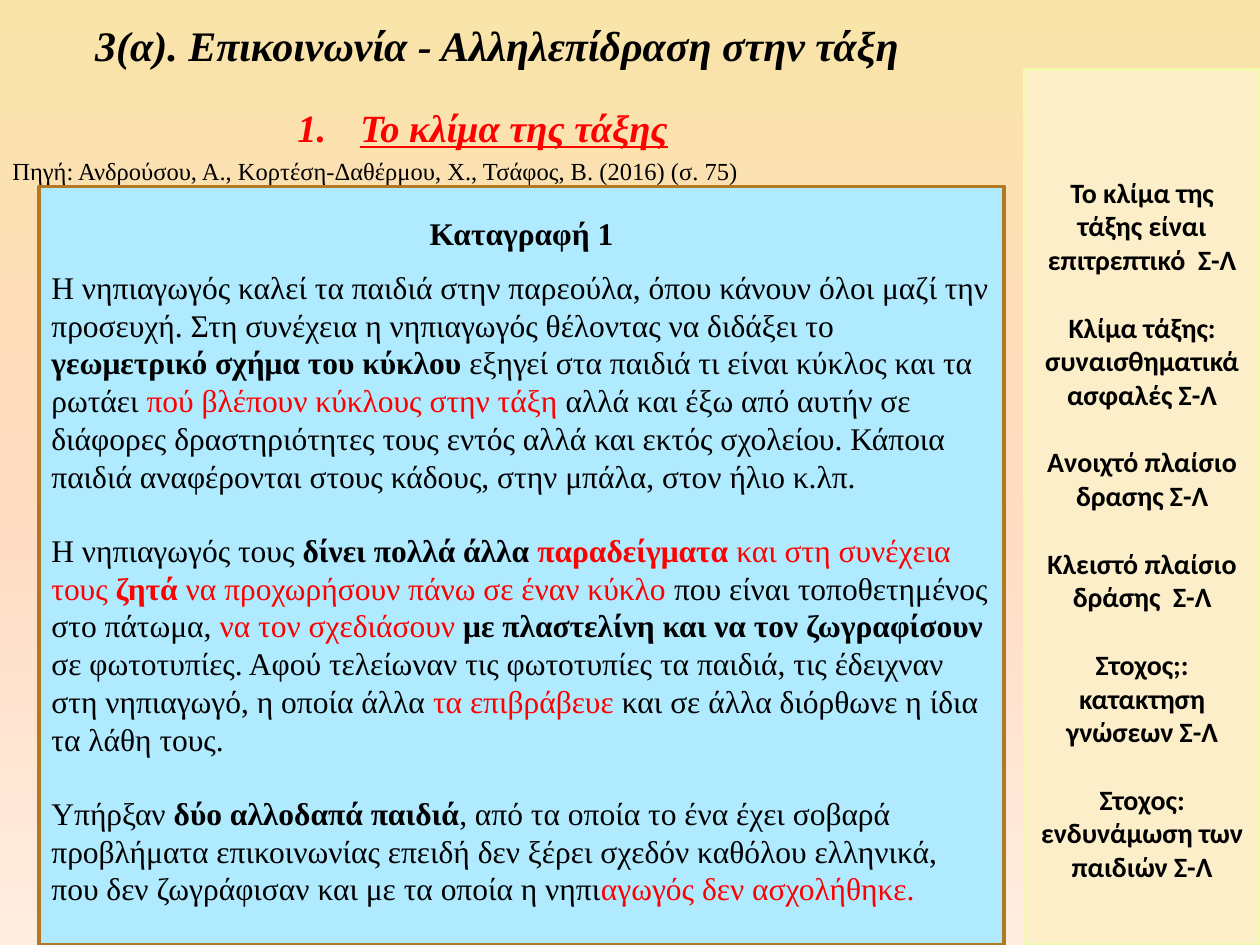
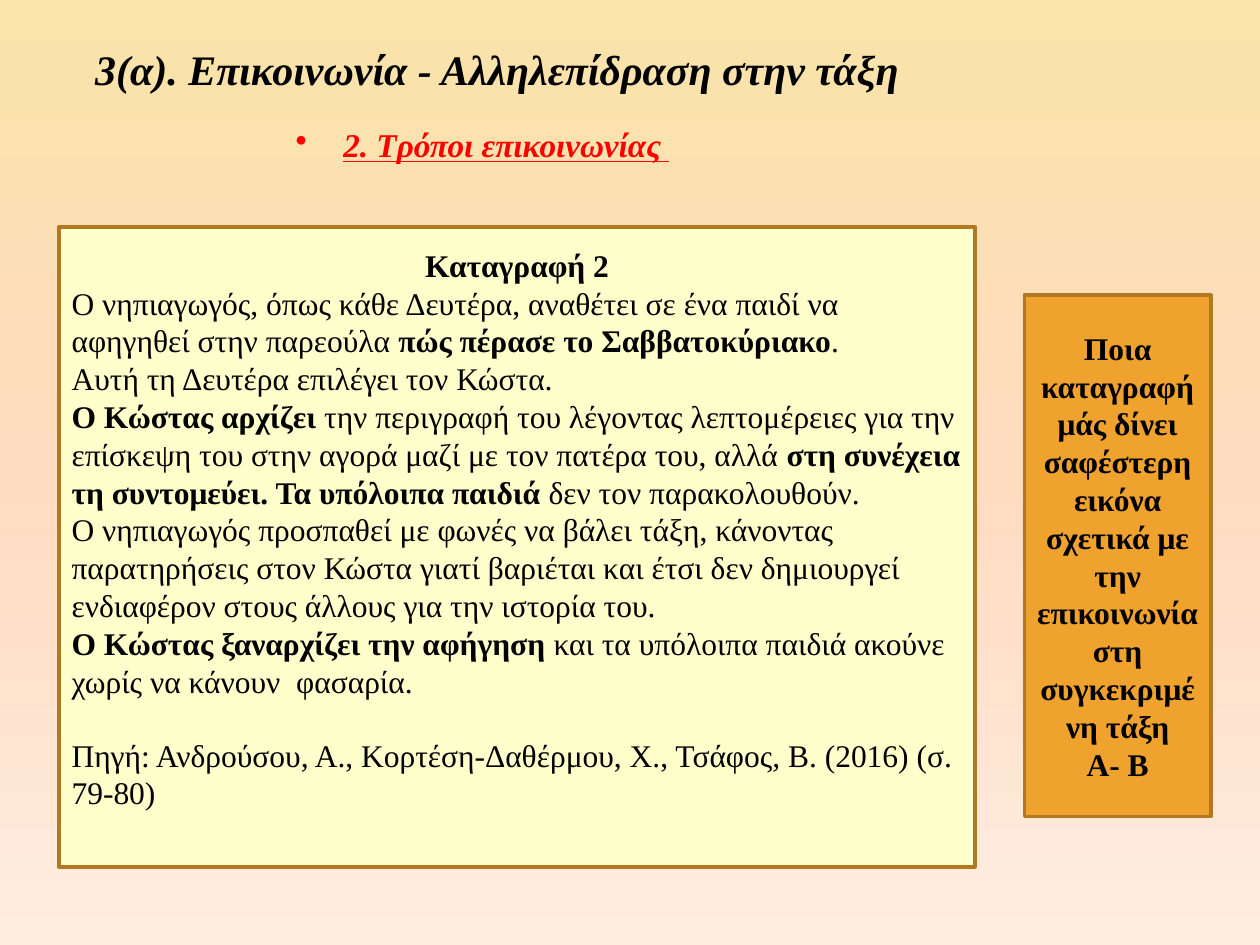
from copy import deepcopy

from pptx import Presentation
from pptx.dml.color import RGBColor
from pptx.enum.shapes import MSO_SHAPE
from pptx.enum.text import MSO_ANCHOR, PP_ALIGN
from pptx.oxml.ns import qn
from pptx.util import Inches, Pt

RECT = MSO_SHAPE.RECTANGLE
TOP, MIDDLE = MSO_ANCHOR.TOP, MSO_ANCHOR.MIDDLE
LEFT, CENTER = PP_ALIGN.LEFT, PP_ALIGN.CENTER

SERIF, SANS = "Times New Roman", "Calibri"
BLACK, RED, BROWN = "000000", "FF0000", "B27822"
BACKGROUND = [(0, "F9E4A9"), (0.5, "FFDBC0"), (1, "FFEDE0")]
TITLE = "3(α). Επικοινωνία - Αλληλεπίδραση στην τάξη"
SOURCE = "Πηγή: Ανδρούσου, Α., Κορτέση-Δαθέρμου, Χ., Τσάφος, Β. (2016) (σ. "
BLANK_LINE = 20.7

# Run styles: b = bold, r = red, i = italic, u = underlined.
RECORD_1 = [
    [("Η νηπιαγωγός καλεί τα παιδιά στην παρεούλα, όπου κάνουν όλοι μαζί την "
      "προσευχή. Στη συνέχεια η νηπιαγωγός θέλοντας να διδάξει το ", ""),
     ("γεωμετρικό σχήμα του κύκλου ", "b"),
     ("εξηγεί στα παιδιά τι είναι κύκλος και τα ρωτάει ", ""),
     ("πού βλέπουν κύκλους στην τάξη ", "r"),
     ("αλλά και έξω από αυτήν σε διάφορες δραστηριότητες τους εντός αλλά και "
      "εκτός σχολείου. Κάποια παιδιά αναφέρονται στους κάδους, στην μπάλα, "
      "στον ήλιο κ.λπ.", "")],
    [("Η νηπιαγωγός τους ", ""),
     ("δίνει πολλά άλλα ", "b"),
     ("παραδείγματα ", "br"),
     ("και στη συνέχεια τους ", "r"),
     ("ζητά ", "br"),
     ("να προχωρήσουν πάνω σε έναν κύκλο ", "r"),
     ("που είναι τοποθετημένος στο πάτωμα, ", ""),
     ("να τον σχεδιάσουν ", "r"),
     ("με πλαστελίνη και να τον ζωγραφίσουν ", "b"),
     ("σε φωτοτυπίες. Αφού τελείωναν τις φωτοτυπίες τα παιδιά, τις έδειχναν "
      "στη νηπιαγωγό, η οποία άλλα ", ""),
     ("τα επιβράβευε ", "r"),
     ("και σε άλλα διόρθωνε η ίδια τα λάθη τους.", "")],
    [("Υπήρξαν ", ""),
     ("δύο αλλοδαπά παιδιά", "b"),
     (", από τα οποία το ένα έχει σοβαρά προβλήματα επικοινωνίας επειδή δεν "
      "ξέρει σχεδόν καθόλου ελληνικά, που δεν ζωγράφισαν και με τα οποία η "
      "νηπι", ""),
     ("αγωγός δεν ασχολήθηκε.", "r")],
]
CLIMATE_CHOICES = [
    "Το κλίμα της τάξης είναι επιτρεπτικό  Σ-Λ",
    "Κλίμα τάξης: συναισθηματικά ασφαλές Σ-Λ",
    "Ανοιχτό πλαίσιο δρασης Σ-Λ",
    "Κλειστό πλαίσιο δράσης  Σ-Λ",
    "Στοχος;: κατακτηση γνώσεων Σ-Λ",
    "Στοχος: ενδυνάμωση των παιδιών Σ-Λ",
]
RECORD_2 = [
    [("Ο νηπιαγωγός, όπως κάθε Δευτέρα, αναθέτει σε ένα παιδί να αφηγηθεί "
      "στην παρεούλα ", ""),
     ("πώς πέρασε το Σαββατοκύριακο", "b"),
     (".", "")],
    [("Αυτή τη Δευτέρα επιλέγει τον Κώστα.", "")],
    [("Ο Κώστας αρχίζει ", "b"),
     ("την περιγραφή του λέγοντας λεπτομέρειες για την επίσκεψη του στην "
      "αγορά μαζί με τον πατέρα του, αλλά ", ""),
     ("στη συνέχεια τη συντομεύει. Τα υπόλοιπα παιδιά ", "b"),
     ("δεν τον παρακολουθούν.", "")],
    [("Ο νηπιαγωγός προσπαθεί με φωνές να βάλει τάξη, κάνοντας παρατηρήσεις "
      "στον Κώστα γιατί βαριέται και έτσι δεν δημιουργεί ενδιαφέρον στους "
      "άλλους για την ιστορία του.", "")],
    [("Ο Κώστας ξαναρχίζει την αφήγηση ", "b"),
     ("και τα υπόλοιπα παιδιά ακούνε χωρίς να κάνουν  φασαρία.", "")],
]
QUESTION = ("Ποια καταγραφή μάς δίνει σαφέστερη εικόνα σχετικά με την "
            "επικοινωνία στη συγκεκριμένη τάξη")


def color(hex_string):
    """Turn a hex string into a colour."""
    return RGBColor.from_string(hex_string)


def paint_background(master):
    """Give every slide the same vertical gradient."""
    fill = master.background.fill
    fill.gradient()
    fill.gradient_angle = 270
    stops = master.element.find(".//" + qn("p:bg")).find(".//" + qn("a:gsLst"))
    stops.append(deepcopy(stops[0]))
    for stop, (position, hex_string) in zip(fill.gradient_stops, BACKGROUND):
        stop.position = position
        stop.color.rgb = color(hex_string)


def set_frame(tf, anchor, top_inset=0.05):
    """Wrap the text and set where it starts."""
    tf.word_wrap = True
    tf.vertical_anchor = anchor
    tf.margin_top = Inches(top_inset)


def add_paragraph(tf, runs, size, align=LEFT, before=0, font=SERIF):
    """Fill the first empty paragraph or a new one with styled runs."""
    p = tf.paragraphs[0] if not tf.paragraphs[0].runs else tf.add_paragraph()
    p.alignment = align
    p.space_before = Pt(before)
    for text, style in runs:
        r = p.add_run()
        r.text = text
        r.font.name, r.font.size = font, Pt(size)
        r.font.bold, r.font.italic = "b" in style, "i" in style
        r.font.underline = "u" in style
        r.font.color.rgb = color(RED if "r" in style else BLACK)
    return p


def set_hanging(p, indent, tag=None, **attributes):
    """Hang the first line and add a bullet or number when one is named."""
    pPr = p._p.get_or_add_pPr()
    pPr.set("marL", str(Inches(indent)))
    pPr.set("indent", str(-Inches(indent)))
    if tag:
        bullet = pPr.makeelement(qn(tag), attributes)
        pPr.append(bullet)


def add_text(slide, box, anchor=TOP, top_inset=0.05):
    """Add an empty text box and return its frame."""
    tf = slide.shapes.add_textbox(*map(Inches, box)).text_frame
    set_frame(tf, anchor, top_inset)
    return tf


def add_panel(slide, box, fill, line=BROWN, anchor=TOP, top_inset=0.05):
    """Add a framed rectangle and return its text frame."""
    sp = slide.shapes.add_shape(RECT, *map(Inches, box))
    sp.shadow.inherit = False
    sp.fill.solid()
    sp.fill.fore_color.rgb = color(fill)
    sp.line.color.rgb = color(line)
    sp.line.width = Pt(2)
    set_frame(sp.text_frame, anchor, top_inset)
    return sp.text_frame


def add_title(slide, height, top_inset=0.05):
    """Add the title that both slides share."""
    tf = add_text(slide, (0, 0, 7.89, height), MIDDLE, top_inset)
    add_paragraph(tf, [(TITLE, "bi")], 24, CENTER).line_spacing = 0.8


def add_record(tf, heading, paragraphs, first_gap=0, gap=0):
    """Write a centred heading and the paragraphs of a classroom record."""
    add_paragraph(tf, [(heading, "b")], 18, CENTER)
    for i, runs in enumerate(paragraphs):
        add_paragraph(tf, runs, 18, before=gap if i else first_gap)


def build_climate_slide(slide):
    """Build the slide on the classroom climate."""
    add_title(slide, 0.78)
    tf = add_text(slide, (0, 0.78, 7.66, 0.75))
    p = add_paragraph(tf, [("Το κλίμα της τάξης", "biru")], 22, CENTER, 4)
    set_hanging(p, 0.5, "a:buAutoNum", type="arabicPeriod")
    set_hanging(add_paragraph(tf, [(SOURCE + "75)", "")], 14, before=2.8), 0.38)

    record = add_panel(slide, (0.31, 1.48, 7.66, 6.02), "AFEAFF", top_inset=0.22)
    add_record(record, "Καταγραφή 1", RECORD_1, 9, BLANK_LINE)

    choices = add_panel(slide, (8.13, 0.55, 1.87, 6.95), "FBEEC9", "F2F9AD",
                        top_inset=0.84)
    for i, choice in enumerate(CLIMATE_CHOICES):
        add_paragraph(choices, [(choice, "b")], 16, CENTER, 19.5 if i else 0, SANS)


def build_communication_slide(slide):
    """Build the slide on ways of communicating."""
    add_title(slide, 0.86, 0.35)
    tf = add_text(slide, (0, 0.94, 7.66, 0.5))
    p = add_paragraph(tf, [("2. Τρόποι επικοινωνίας ", "biru")], 19, CENTER, 3.8)
    set_hanging(p, 0.38, "a:buChar", char="•")

    record = add_panel(slide, (0.47, 1.8, 7.27, 5.08), "FFFFCC", top_inset=0.15)
    add_record(record, "Καταγραφή 2", RECORD_2)
    add_paragraph(record, [(SOURCE + "79-80)", "")], 18, before=BLANK_LINE)

    question = add_panel(slide, (8.13, 2.34, 1.48, 4.14), "F0A22E", anchor=MIDDLE)
    for text in (QUESTION, "Α- Β"):
        add_paragraph(question, [(text, "b")], 18, CENTER)


def main():
    """Build and save the presentation."""
    prs = Presentation()
    prs.slide_width, prs.slide_height = Inches(10), Inches(7.5)
    paint_background(prs.slide_master)
    for build in (build_climate_slide, build_communication_slide):
        build(prs.slides.add_slide(prs.slide_layouts[6]))
    prs.save("out.pptx")


if __name__ == "__main__":
    main()
